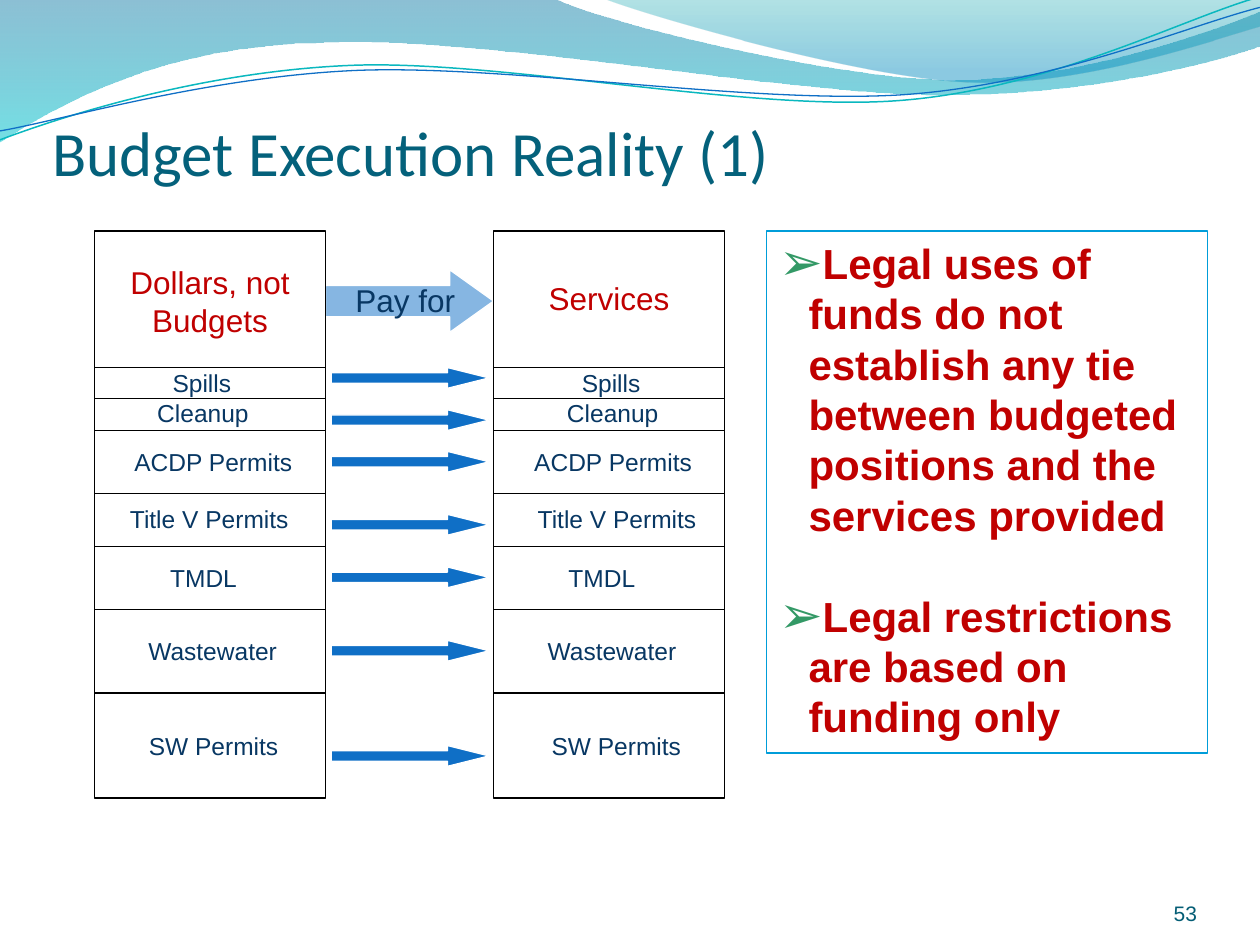
import dataclasses
import typing

import pptx
import pptx.dml.color
import pptx.enum.shapes
import pptx.enum.text
import pptx.oxml
import pptx.oxml.ns
import pptx.util

Cm = pptx.util.Cm
Pt = pptx.util.Pt
RGB = pptx.dml.color.RGBColor.from_string
SHAPE = pptx.enum.shapes.MSO_SHAPE
ALIGN = pptx.enum.text.PP_ALIGN
ANCHOR = pptx.enum.text.MSO_ANCHOR
qn = pptx.oxml.ns.qn


@dataclasses.dataclass(frozen=True)
class Theme:
    title: str = "04617B"
    number: str = "045D75"
    heading: str = "C00000"
    label: str = "083763"
    arrow: str = "0F6FC6"
    arrow_edge: str = "FFFFFF"
    rule: str = "000000"
    panel_edge: str = "009DD9"
    bullet: str = "339966"
    title_font: str = "Calibri"
    body_font: str = "Arial"
    title_size: int = 36
    panel_size: int = 24
    heading_size: int = 18
    label_size: int = 14
    number_size: int = 12
    line_width: float = 0.75


class Box(typing.NamedTuple):
    left: float
    top: float
    width: float
    height: float


class Stop(typing.NamedTuple):
    position: float
    color: str
    opacity: int


class Wave(typing.NamedTuple):
    start: tuple
    segments: list
    stops: tuple = ()
    line: str = ""
    line_width: float = 0


class Program(typing.NamedTuple):
    name: str
    lefts: tuple
    top: float
    width: float
    rule: float
    arrow: float


THEME = Theme()
COLUMNS = [Box(1.9, 4.66, 4.66, 11.43), Box(9.95, 4.66, 4.66, 11.43)]
PROGRAMS = [
    Program("Spills", (3.23, 11.48), 7.29, 1.7, 7.41, 7.41),
    Program("Cleanup", (2.92, 11.18), 7.9, 2.36, 8.04, 8.26),
    Program("ACDP Permits", (2.46, 10.52), 8.89, 3.71, 8.68, 9.1),
    Program("Title V Permits", (2.37, 10.59), 10.03, 3.73, 9.95, 10.37),
    Program("TMDL", (3.18, 11.21), 11.23, 1.9, 11.01, 11.43),
    Program("Wastewater", (2.74, 10.79), 12.7, 3.25, 12.28, 12.91),
    Program("SW Permits", (2.75, 10.87), 14.61, 3.15, 13.97, 15.03),
]
HEADINGS = [
    ("Dollars, not Budgets", Box(2.33, 5.18, 3.81, 1.8), THEME.heading),
    ("Services", Box(10.16, 5.51, 4.24, 1.02), THEME.heading),
    ("Pay for ", Box(6.14, 5.54, 4.24, 1.02), THEME.label),
]
LEGAL_POINTS = [
    "Legal uses of funds do not establish any tie between budgeted positions and the services provided",
    "Legal restrictions are based on funding only",
]
WAVES = [
    Wave((0, -0.03), [
        (11.18, -0.03),
        (12.09, 0.43, 16.87, 1.6, 19.25, 1.6),
        (21.67, 1.6, 24.33, 0.66, 25.4, 0.23),
        (25.43, 0.91),
        (24.97, 1.12, 22.1, 1.93, 18.95, 1.91),
        (15.8, 1.91, 9.7, 0.71, 6.53, 0.86),
        (3.28, 0.89, 1.17, 2.11, -0.03, 2.87),
    ], (Stop(0, "0074A1", 45), Stop(1, "00C6CF", 55))),
    Wave((12.17, -0.03), [
        (12.93, 0.28, 17.32, 1.57, 19.53, 1.65),
        (21.74, 1.75, 24.41, 0.81, 25.4, 0.53),
        (25.4, 0),
    ], (Stop(0, "00A1A9", 30), Stop(0.8, "008BBF", 45))),
    Wave((0, 2.82), [
        (1.22, 2.36, 4.01, 1.45, 7.04, 1.32),
        (10.03, 1.19, 15.06, 2.26, 18.11, 2.03),
        (21.16, 1.8, 23.83, 0.38, 25.35, -0.05),
    ], line="0AB8BF", line_width=0.85),
    Wave((0, 2.64), [
        (1.19, 2.44, 4.17, 1.55, 7.19, 1.42),
        (10.24, 1.3, 15.16, 2.11, 18.21, 1.91),
        (21.23, 1.7, 23.9, 0.53, 25.4, 0.15),
    ], line="0F6FC6", line_width=0.75),
]


def apply(target, **values) -> None:
    for attribute, value in values.items():
        setattr(target, attribute, value)


def add_xml(parent, tag: str, **attributes):
    element = parent.makeelement(qn(tag), {key: str(value) for key, value in attributes.items()})
    parent.append(element)
    return element


def set_opacity(fill_element, percent: int) -> None:
    add_xml(fill_element.find(".//" + qn("a:srgbClr")), "a:alpha", val=percent * 1000)


def set_line(line, color: str, width: float = THEME.line_width) -> None:
    line.color.rgb = RGB(color)
    line.width = Pt(width)


def bend_segments(ribbon, segments: list) -> None:
    corners = iter(list(ribbon.element.spPr.iter(qn("a:lnTo"))))
    for segment in segments:
        steps = [next(corners) for _ in range(len(segment) // 2)]
        if len(steps) == 3:
            outline = steps[0].getparent()
            curve = add_xml(outline, "a:cubicBezTo")
            outline.replace(steps[0], curve)
            for step in steps:
                curve.append(step.find(qn("a:pt")))
            for step in steps[1:]:
                outline.remove(step)


def draw_wave(slide, wave: Wave) -> None:
    builder = slide.shapes.build_freeform(*map(Cm, wave.start))
    points = [(Cm(segment[i]), Cm(segment[i + 1])) for segment in wave.segments
              for i in range(0, len(segment), 2)]
    builder.add_line_segments(points, close=bool(wave.stops))
    ribbon = builder.convert_to_shape()
    bend_segments(ribbon, wave.segments)
    ribbon.shadow.inherit = False
    if not wave.stops:
        ribbon.fill.background()
        set_line(ribbon.line, wave.line, wave.line_width)
        return
    ribbon.line.fill.background()
    ribbon.fill.gradient()
    ribbon.fill.gradient_angle = 270
    for gradient_stop, stop in zip(ribbon.fill.gradient_stops, wave.stops):
        gradient_stop.position = stop.position
        gradient_stop.color.rgb = RGB(stop.color)
    for stop_xml, stop in zip(ribbon.element.spPr.iter(qn("a:gs")), wave.stops):
        set_opacity(stop_xml, stop.opacity)


def draw_shape(slide, kind, box: Box, edge: str, fill: str = "", adjustments: tuple = ()):
    shape = slide.shapes.add_shape(kind, *map(Cm, box))
    shape.shadow.inherit = False
    set_line(shape.line, edge)
    if fill:
        shape.fill.solid()
        shape.fill.fore_color.rgb = RGB(fill)
    else:
        shape.fill.background()
    for index, value in enumerate(adjustments):
        shape.adjustments[index] = value
    return shape


def draw_text(slide, text: str, box: Box, size: int, color: str, font: str = THEME.body_font,
              align=ALIGN.LEFT, **frame_values) -> None:
    frame = slide.shapes.add_textbox(*map(Cm, box)).text_frame
    apply(frame, **{"word_wrap": True, **frame_values})
    paragraph = frame.paragraphs[0]
    paragraph.alignment = align
    run = paragraph.add_run()
    run.text = text
    apply(run.font, name=font, size=Pt(size))
    run.font.color.rgb = RGB(color)


def draw_rule(slide, column: Box, top: float) -> None:
    rule = slide.shapes.add_connector(pptx.enum.shapes.MSO_CONNECTOR.STRAIGHT, Cm(column.left), Cm(top),
                                      Cm(column.left + column.width), Cm(top))
    set_line(rule.line, THEME.rule)
    add_xml(rule.element.spPr, "a:effectLst")


def draw_legal_panel(slide) -> None:
    panel = draw_shape(slide, SHAPE.RECTANGLE, Box(15.45, 4.66, 8.89, 10.52), THEME.panel_edge)
    frame = panel.text_frame
    apply(frame, word_wrap=True, vertical_anchor=ANCHOR.TOP)
    for index, point in enumerate(LEGAL_POINTS):
        paragraph = frame.add_paragraph() if index else frame.paragraphs[0]
        apply(paragraph, alignment=ALIGN.LEFT, space_before=Pt(28.8 * index))
        run = paragraph.add_run()
        run.text = point
        apply(run.font, name=THEME.body_font, size=Pt(THEME.panel_size), bold=True)
        run.font.color.rgb = RGB(THEME.heading)
        properties = paragraph._p.get_or_add_pPr()
        properties.set("marL", str(Cm(0.6)))
        properties.set("indent", str(Cm(-0.6)))
        add_xml(add_xml(properties, "a:buClr"), "a:srgbClr", val=THEME.bullet)
        add_xml(properties, "a:buSzPct", val=125000)
        add_xml(properties, "a:buFont", typeface=THEME.body_font)
        add_xml(properties, "a:buChar", char="➢")


def main() -> None:
    deck = pptx.Presentation()
    apply(deck, slide_width=Cm(25.4), slide_height=Cm(19.05))
    slide = deck.slides.add_slide(deck.slide_layouts[6])
    for wave in WAVES:
        draw_wave(slide, wave)
    pay_arrow = draw_shape(slide, SHAPE.RIGHT_ARROW, Box(6.56, 5.44, 3.39, 1.26), THEME.arrow_edge,
                           THEME.arrow, (0.5, 0.7))
    set_opacity(pay_arrow.element.spPr.find(qn("a:solidFill")), 50)
    flush = dict(margin_left=0, margin_right=0, margin_top=0, margin_bottom=0, vertical_anchor=ANCHOR.BOTTOM)
    draw_text(slide, "Budget Execution Reality (1)", Box(1.06, 0.64, 22.86, 3.18), THEME.title_size,
              THEME.title, THEME.title_font, **flush)
    draw_text(slide, "53", Box(22.01, 17.65, 2.12, 1.01), THEME.number_size, THEME.number,
              align=ALIGN.RIGHT, **flush)
    for column in COLUMNS:
        draw_shape(slide, SHAPE.RECTANGLE, column, THEME.rule)
    for text, box, color in HEADINGS:
        draw_text(slide, text, box, THEME.heading_size, color, align=ALIGN.CENTER)
    for program in PROGRAMS:
        draw_shape(slide, SHAPE.RIGHT_ARROW, Box(6.68, program.arrow, 3.18, 0.42), THEME.arrow_edge,
                   THEME.arrow, (0.5, 2))
        for column, left in zip(COLUMNS, program.lefts):
            draw_rule(slide, column, program.rule)
            draw_text(slide, program.name, Box(left, program.top, program.width, 0.86),
                      THEME.label_size, THEME.label, word_wrap=False)
    draw_legal_panel(slide)
    deck.save("out.pptx")


if __name__ == "__main__":
    main()
